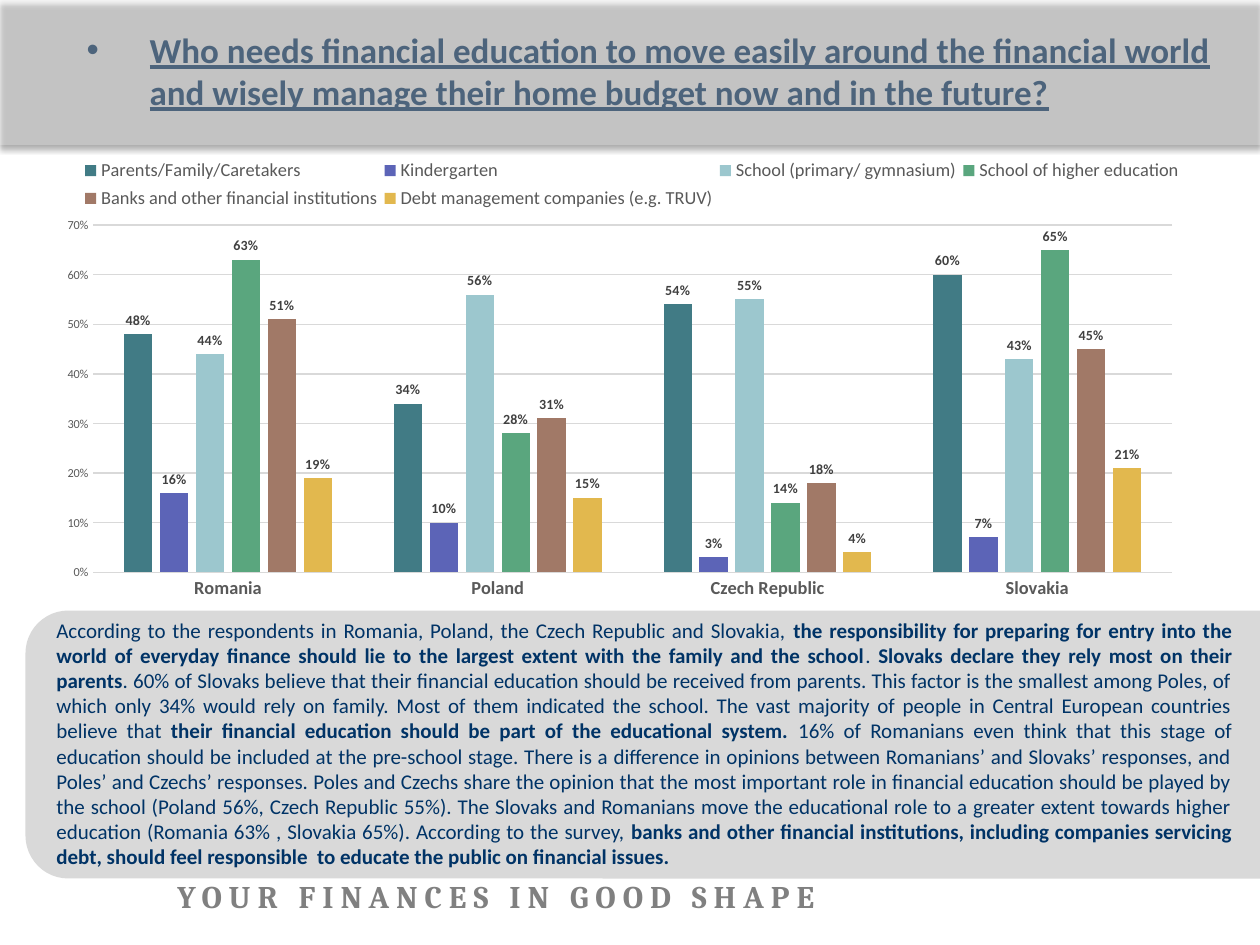
from lxml.etree import SubElement
from pptx import Presentation
from pptx.chart.data import CategoryChartData
from pptx.dml.color import RGBColor
from pptx.enum.chart import XL_CHART_TYPE, XL_LABEL_POSITION, XL_LEGEND_POSITION, XL_TICK_MARK
from pptx.enum.shapes import MSO_SHAPE
from pptx.enum.text import MSO_ANCHOR, PP_ALIGN
from pptx.oxml import parse_xml
from pptx.oxml.ns import nsdecls, qn
from pptx.util import Emu, Inches, Pt

PX = 914400 / 126
NAVY, GREY, PANEL = "003366", "595959", "D9D9D9"

TITLE = ("Who needs financial education to move easily around the financial world "
         "and wisely manage their home budget now and in the future?")

COUNTRIES = ["Romania", "Poland", "Czech Republic", "Slovakia"]
EDUCATORS = [
    ("Parents/Family/Caretakers", "417B85", (0.48, 0.34, 0.54, 0.60)),
    ("Kindergarten", "5C64B7", (0.16, 0.10, 0.03, 0.07)),
    ("School (primary/ gymnasium)", "9CC7CE", (0.44, 0.56, 0.55, 0.43)),
    ("School of higher education", "5AA67E", (0.63, 0.28, 0.14, 0.65)),
    ("Banks and other financial institutions", "A17967", (0.51, 0.31, 0.18, 0.45)),
    ("Debt management companies (e.g. TRUV)", "E2B84E", (0.19, 0.15, 0.04, 0.21)),
]

# Plain and bold passages alternate, starting with plain
COMMENTARY = [
    "According to the respondents in Romania, Poland, the Czech Republic and Slovakia, ",
    "the responsibility for preparing for entry into the world of everyday finance should lie "
    "to the largest extent with the family and the school",
    ". ",
    "Slovaks declare they rely most on their parents",
    ". 60% of Slovaks believe that their financial education should be received from parents. "
    "This factor is the smallest among Poles, of which only 34% would rely on family. Most of "
    "them indicated the school. The vast majority of people in Central European countries "
    "believe that ",
    "their financial education should be part of the educational system. ",
    "16% of Romanians even think that this stage of education should be included at the "
    "pre-school stage. There is a difference in opinions between Romanians’ and Slovaks’ "
    "responses, and Poles’ and Czechs’ responses. Poles and Czechs share the opinion that the "
    "most important role in financial education should be played by the school (Poland 56%, "
    "Czech Republic 55%). The Slovaks and Romanians move the educational role to a greater "
    "extent towards higher education (Romania 63% , Slovakia 65%). According to the survey, ",
    "banks and other financial institutions, including companies servicing debt, should feel "
    "responsible  to educate the public on financial issues.",
]


def px(*lengths):
    return [Emu(round(length * PX)) for length in lengths]


def rgb(code):
    return RGBColor.from_string(code)


def style_font(font, size, color, bold=False, name="Calibri"):
    font.size, font.bold, font.name = Pt(size), bold, name
    font.color.rgb = rgb(color)


def add_run(paragraph, text, size=12, color=NAVY, bold=False, name="Calibri",
            underline=False, spacing=0):
    run = paragraph.add_run()
    run.text = text
    style_font(run.font, size, color, bold, name)
    if underline:
        run.font.underline = True
    if spacing:
        run.font._element.set("spc", str(spacing * 100))


def add_text_box(slide, box):
    frame = slide.shapes.add_textbox(*px(*box)).text_frame
    frame.word_wrap = True
    return frame.paragraphs[0]


def add_panel(slide, preset, box, color):
    panel = slide.shapes.add_shape(preset, *px(*box))
    panel.shadow.inherit = False
    panel.fill.solid()
    panel.fill.fore_color.rgb = rgb(color)
    panel.line.fill.background()
    return panel


def add_banner(slide):
    banner = add_panel(slide, MSO_SHAPE.RECTANGLE, (0, 0, 1260, 145), "F2F2F2")
    properties = banner._element.spPr
    fill_color = properties.find(qn("a:solidFill"))[0]
    SubElement(fill_color, qn("a:alpha"), val="32000")
    shadow = SubElement(properties.find(qn("a:effectLst")), qn("a:outerShdw"),
                        blurRad=str(Pt(3.5)), dist=str(Pt(2.2)), dir="5400000",
                        rotWithShape="0")
    shadow_color = SubElement(shadow, qn("a:srgbClr"), val="000000")
    SubElement(shadow_color, qn("a:alpha"), val="32000")


def fill_title(slide):
    title = slide.shapes.title
    title.left, title.top, title.width, title.height = px(74, 26, 1171, 89)
    frame = title.text_frame
    frame.word_wrap = True
    frame.vertical_anchor = MSO_ANCHOR.MIDDLE
    heading = frame.paragraphs[0]
    heading.alignment = PP_ALIGN.LEFT
    indents = heading._p.get_or_add_pPr()
    indents.set("marL", str(Inches(0.5)))
    indents.set("indent", str(-Inches(0.5)))
    SubElement(indents, qn("a:buFont"), typeface="Arial")
    SubElement(indents, qn("a:buChar"), char="•")
    add_run(heading, TITLE, size=20, bold=True, underline=True)


def add_commentary(slide):
    # Panel with its rounded end turned to the left
    panel = add_panel(slide, MSO_SHAPE.ROUND_2_SAME_RECTANGLE, (509, 127, 268, 1235), PANEL)
    panel.adjustments[0] = 0.16
    panel.rotation = 90
    panel._element.spPr.xfrm.set("flipV", "1")

    paragraph = add_text_box(slide, (44, 611, 1201, 238))
    paragraph.alignment = PP_ALIGN.JUSTIFY
    paragraph.space_after = Pt(6)
    for index, passage in enumerate(COMMENTARY):
        add_run(paragraph, passage, bold=index % 2 == 1)


def place(element, x, y, w, h, inner=False):
    """Give a chart part a manual layout in fractions of the chart."""
    for old in element.findall(qn("c:layout")):
        element.remove(old)
    target = '<c:layoutTarget val="inner"/>' if inner else ""
    layout = parse_xml(
        f'<c:layout {nsdecls("c")}><c:manualLayout>{target}'
        f'<c:xMode val="edge"/><c:yMode val="edge"/><c:x val="{x}"/><c:y val="{y}"/>'
        f'<c:w val="{w}"/><c:h val="{h}"/></c:manualLayout></c:layout>')
    element.insert(0 if inner else 1, layout)


def format_axes(chart):
    countries, shares = chart.category_axis, chart.value_axis
    for axis, size, bold in ((countries, 10.5, True), (shares, 7, False)):
        axis.major_tick_mark = axis.minor_tick_mark = XL_TICK_MARK.NONE
        style_font(axis.tick_labels.font, size, GREY, bold)
    shares.minimum_scale, shares.maximum_scale, shares.major_unit = 0, 0.7, 0.1
    shares.tick_labels.number_format = "0%"
    shares.tick_labels.number_format_is_linked = False
    shares.format.line.fill.background()
    shares.has_major_gridlines = True
    for line in (countries.format.line, shares.major_gridlines.format.line):
        line.color.rgb = rgb(PANEL)
        line.width = Pt(0.75)


def add_educators_chart(slide):
    data = CategoryChartData(number_format="0%")
    data.categories = COUNTRIES
    for name, _, shares in EDUCATORS:
        data.add_series(name, shares)
    chart = slide.shapes.add_chart(XL_CHART_TYPE.COLUMN_CLUSTERED,
                                   *px(44, 145, 1142, 466), data).chart
    style_font(chart.font, 7, "000000")
    chart.has_title = False
    format_axes(chart)

    # Columns and their labels
    plot = chart.plots[0]
    plot.gap_width, plot.overlap, plot.vary_by_categories = 219, -27, False
    for series, (_, color, _) in zip(plot.series, EDUCATORS):
        series.format.fill.solid()
        series.format.fill.fore_color.rgb = rgb(color)
        labels = series.data_labels
        labels.show_value = True
        labels.position = XL_LABEL_POSITION.OUTSIDE_END
        labels.number_format, labels.number_format_is_linked = "0%", False
        style_font(labels.font, 8, "404040", bold=True)

    # Legend above the plot
    chart.has_legend = True
    legend = chart.legend
    legend.position = XL_LEGEND_POSITION.BOTTOM
    legend.include_in_layout = False
    style_font(legend.font, 10.5, GREY)
    place(legend._element, 0.03, 0.02, 0.97, 0.13)
    place(chart._chartSpace.chart.plotArea, 0.043, 0.172, 0.945, 0.745, inner=True)


def main():
    deck = Presentation()
    deck.slide_width, deck.slide_height = px(1260, 945)
    slide = deck.slides.add_slide(deck.slide_layouts[5])
    add_banner(slide)
    slogan = add_text_box(slide, (165, 871, 912, 66))
    add_run(slogan, "YOUR FINANCES IN GOOD SHAPE", size=18, color="808080", bold=True,
            name="Cambria", spacing=4)
    fill_title(slide)
    add_commentary(slide)
    add_educators_chart(slide)
    deck.save("out.pptx")


if __name__ == "__main__":
    main()
